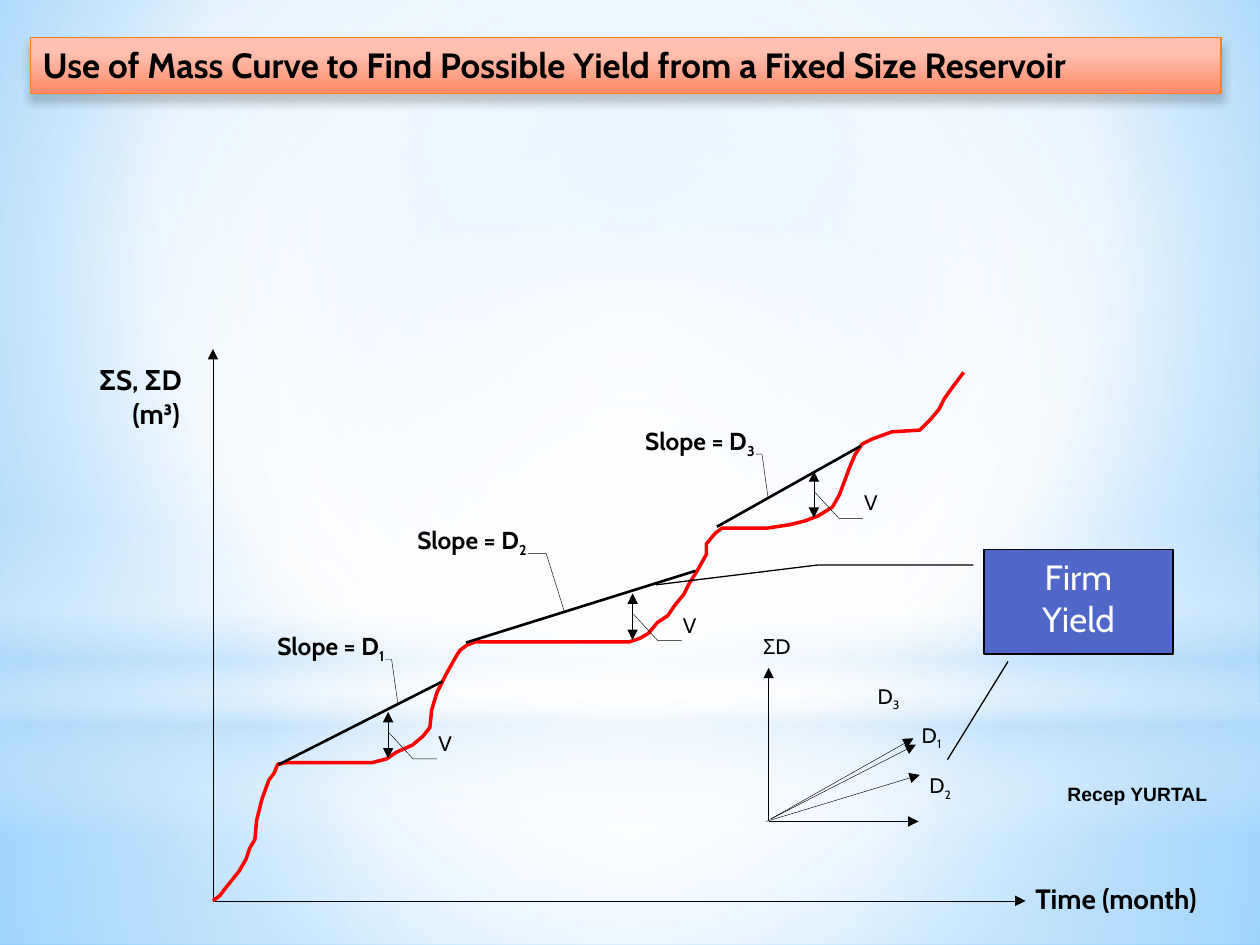
from lxml.etree import SubElement
from pptx import Presentation
from pptx.dml.color import RGBColor
from pptx.enum.shapes import MSO_CONNECTOR, MSO_SHAPE
from pptx.enum.text import MSO_ANCHOR, MSO_AUTO_SIZE, PP_ALIGN
from pptx.oxml.ns import qn
from pptx.util import Pt

CURVE = [
    (0, 0), (4, 3), (7, 7), (11, 12), (15, 17), (19, 24), (21, 30), (24, 35),
    (25, 46), (28, 58), (32, 69), (35, 73), (37, 78), (42, 79), (91, 79),
    (99, 81), (105, 85), (114, 89), (120, 94), (124, 99), (125, 109),
    (128, 119), (133, 129), (138, 138), (141, 143), (145, 146), (150, 148),
    (238, 148), (244, 150), (249, 153), (254, 159), (260, 163), (264, 169),
    (269, 175), (272, 181), (277, 189), (282, 198), (282, 204), (287, 210),
    (291, 213), (317, 213), (330, 215), (338, 217), (346, 220), (354, 225),
    (358, 232), (361, 240), (364, 248), (367, 255), (371, 261), (377, 264),
    (388, 268), (404, 269), (410, 275), (415, 281), (418, 287), (423, 294),
    (429, 302),
]
SHORT_LEADER = [0.5, 1, 0.5, 1.046, 1.232, 1.092]
LONG_LEADER = [0.5, 1, 0.5, 1.14, 1.507, 1.282]
V_LEADER = [0.5, 0, 0.5, -0.56, 0.06, -1.12]
DEMANDS = [
    ("1", (37.4, 77.8), (131, 125.3), (100.1, 108), (23.8, 154.8), SHORT_LEADER),
    ("2", (144.7, 147.6), (275.8, 188.6), (239.8, 175.7), (105.1, 215.3), LONG_LEADER),
    ("3", (288, 213.8), (370.1, 259.9), (343.4, 245.5), (235.4, 272.2), SHORT_LEADER),
]


def rgb(value):
    return RGBColor.from_string(value)


def color_xml(parent, value, alpha=100):
    clr = SubElement(parent, qn("a:srgbClr"), val=value)
    if alpha < 100:
        SubElement(clr, qn("a:alpha"), val=str(alpha * 1000))


def set_gradient(fill, parent, stops, angle=None, to=None):
    fill.solid()
    grad = parent.makeelement(qn("a:gradFill"), {"rotWithShape": "1"})
    gs_list = SubElement(grad, qn("a:gsLst"))
    for pos, *stop in stops:
        color_xml(SubElement(gs_list, qn("a:gs"), pos=str(pos * 1000)), *stop)
    if to:
        center = SubElement(grad, qn("a:path"), {"path": "circle"})
        SubElement(center, qn("a:fillToRect"),
                   {side: str(v * 1000) for side, v in zip("ltrb", to)})
    else:
        SubElement(grad, qn("a:lin"), ang=str(angle * 60000), scaled="0")
    parent.replace(parent.find(qn("a:solidFill")), grad)


def add_line(s, start, end, width, head=False, tail=False):
    c = s.shapes.add_connector(MSO_CONNECTOR.STRAIGHT,
                               *[Pt(v) for v in (*start, *end)])
    c.line.color.rgb = rgb("000000")
    c.line.width = Pt(width)
    ln = c.line._get_or_add_ln()
    for tag, used in (("a:headEnd", head), ("a:tailEnd", tail)):
        if used:
            SubElement(ln, qn(tag), type="triangle")
    SubElement(c._element.spPr, qn("a:effectLst"))


def add_shape(s, kind, box, line=None, width=0.25, adj=()):
    sp = s.shapes.add_shape(kind, *[Pt(v) for v in box])
    sp.shadow.inherit = False
    sp.fill.background()
    if line:
        sp.line.color.rgb = rgb(line)
        sp.line.width = Pt(width)
    else:
        sp.line.fill.background()
    for i, value in enumerate(adj):
        sp.adjustments[i] = value
    return sp


def write(sp, lines, size, bold=False, color="000000", aligns=(PP_ALIGN.LEFT,),
          sub="", inset=0.72):
    tf = sp.text_frame
    tf.word_wrap = True
    tf.vertical_anchor = MSO_ANCHOR.TOP
    if inset is not None:
        tf.margin_left = tf.margin_right = tf.margin_top = tf.margin_bottom = Pt(inset)
    for i, text in enumerate(lines):
        p = tf.add_paragraph() if i else tf.paragraphs[0]
        p.alignment = aligns[min(i, len(aligns) - 1)]
        p.font.size, p.font.bold, p.font.name = Pt(size), bold, "Cabin"
        p.font.color.rgb = rgb(color)
        p.add_run().text = text
        if sub:
            r = p.add_run()
            r.text = sub
            r.font._element.set("baseline", "-25000")


def add_label(s, box, lines, size, **style):
    write(add_shape(s, MSO_SHAPE.ROUNDED_RECTANGLE, box), lines, size, **style)


def add_backdrop(s, w, h):
    fill = s.background.fill
    fill.solid()
    set_gradient(fill, s._element.find(".//" + qn("p:bgPr")),
                 [(0, "9ED5FF"), (60, "FFFFFF"), (100, "5BB9FF")], to=(20, 10, 20, 60))
    horizon = 401.8
    mid = {"to": (50, 50, 50, 50)}
    rect = MSO_SHAPE.RECTANGLE
    layers = [
        (rect, horizon, h - horizon,
         [(0, "FFFFFF", 91), (37, "FFFFFF", 76), (100, "B4DCFA", 79)], mid),
        (rect, 0, horizon,
         [(0, "FFFFFF", 89), (48, "FFFFFF", 62), (100, "B4DCFA", 79)], mid),
        (rect, 296.6, 180,
         [(0, "FFFFFF", 0), (29, "FFFFFF", 30), (45, "B4DCFA", 40),
          (55, "FFFFFF", 26), (65, "B4DCFA", 60), (100, "FFFFFF", 0)], {"angle": 90}),
        (MSO_SHAPE.OVAL, 126, horizon, [(0, "FFFFFF"), (56, "FFFFFF", 0)], mid),
    ]
    for kind, top, height, stops, shade in layers:
        sp = add_shape(s, kind, (0, top, w, height))
        set_gradient(sp.fill, sp._element.spPr, stops, **shade)


def add_title(s, box):
    sp = add_shape(s, MSO_SHAPE.RECTANGLE, box, "FF8021", 0.75)
    spPr = sp._element.spPr
    set_gradient(sp.fill, spPr, [(28, "FFC0AF"), (100, "FF8968")], angle=90)
    shadow = SubElement(spPr.find(qn("a:effectLst")), qn("a:outerShdw"),
                        blurRad=str(Pt(5)), dist=str(Pt(4)), dir="5400000",
                        rotWithShape="0")
    color_xml(shadow, "000000", 20)
    write(sp, ["Use of Mass Curve to Find Possible Yield from a Fixed Size Reservoir"],
          20, bold=True, inset=None)
    sp.text_frame.auto_size = MSO_AUTO_SIZE.SHAPE_TO_FIT_TEXT


def add_mass_curve(s, x, y, w, h):
    base = y + h

    def at(dx, up):
        return x + dx, base - up

    add_line(s, (x, y), (x, base), 0.25, head=True)
    add_line(s, (x, base), (x + w, base), 0.25, tail=True)
    points = [tuple(Pt(v) for v in at(*point)) for point in CURVE]
    builder = s.shapes.build_freeform(*points[0])
    builder.add_line_segments(points[1:], close=False)
    curve = builder.convert_to_shape()
    curve.shadow.inherit = False
    curve.fill.background()
    curve.line.color.rgb = rgb("FF0000")
    curve.line.width = Pt(2)
    callout = MSO_SHAPE.LINE_CALLOUT_2_NO_BORDER
    for sub, start, end, gap, slope, leader in DEMANDS:
        gx, gy = at(*gap)
        add_line(s, (gx, gy), (gx, gy + 26.6), 0.25, head=True, tail=True)
        add_line(s, at(*start), at(*end), 1.5)
        v = add_shape(s, callout, (gx + 28, gy + 10, 24.5, 33.8), "000000", adj=V_LEADER)
        write(v, ["V"], 12)
        sp = add_shape(s, callout, (*at(*slope), 74.9, 33.8), "000000", adj=leader)
        write(sp, ["Slope = D"], 14, bold=True, aligns=[PP_ALIGN.RIGHT], sub=sub)
    add_label(s, (x + w + 3, base - 13.7, 108.7, 38.9), ["Time (month)"], 16, bold=True)
    add_label(s, (x - 68.4, y + 4.3, 72, 59), ["ΣS, ΣD", "(m³)"], 16, bold=True,
              aligns=[PP_ALIGN.LEFT, PP_ALIGN.CENTER])


def add_slope_diagram(s, x, y, w, h):
    base = y + h
    add_line(s, (x, y), (x, base), 0.25, head=True)
    add_line(s, (x, base), (x + w, base), 0.25, tail=True)
    rays = [("1", (1.2, 1.4), (84.2, 43.9), (85.7, 58.3)),
            ("2", (-1.4, 0), (86.4, 26.6), (90, 29.5)),
            ("3", (1.2, 1.4), (82.8, 47.5), (60.5, 80.6))]
    for sub, start, end, label in rays:
        add_line(s, (x + start[0], base - start[1]), (x + end[0], base - end[1]),
                 0.25, tail=True)
        add_label(s, (x + label[0], base - label[1], 23, 28.1), ["D"], 12, sub=sub)
    add_label(s, (x - 5, y - 21.6, 27.4, 34.6), ["ΣD"], 12)


def add_firm_yield(s, x, y, w, h):
    sp = add_shape(s, MSO_SHAPE.LINE_CALLOUT_2, (x, y, w, h), "000000", 0.75,
                   [0.15, -0.056, 0.15, -0.879, 0.34, -1.737])
    sp.fill.solid()
    sp.fill.fore_color.rgb = rgb("4E67C8")
    write(sp, ["Firm", "Yield"], 20, color="FFFFFF", aligns=[PP_ALIGN.CENTER], inset=None)
    add_line(s, (x - 20.9, y + 120.2), (x + 13.7, y + 64.1), 0.75)


def add_author(s, box):
    sp = s.shapes.add_textbox(*[Pt(v) for v in box])
    write(sp, ["Recep YURTAL"], 11, bold=True, aligns=[PP_ALIGN.RIGHT], inset=None)
    sp.text_frame.vertical_anchor = MSO_ANCHOR.MIDDLE
    sp.text_frame.paragraphs[0].font.name = "Arial"


def main():
    prs = Presentation()
    prs.slide_width, prs.slide_height = Pt(720), Pt(540)
    s = prs.slides.add_slide(prs.slide_layouts[6])
    add_backdrop(s, 720, 540)
    add_author(s, (589, 439.2, 108, 28.8))
    add_mass_curve(s, 121.7, 199.4, 464.4, 315.4)
    add_slope_diagram(s, 439.2, 381.6, 85.7, 87.8)
    add_firm_yield(s, 562.3, 313.9, 108, 59.8)
    add_title(s, (17.3, 21.6, 680.4, 31.7))
    prs.save("out.pptx")


if __name__ == "__main__":
    main()
